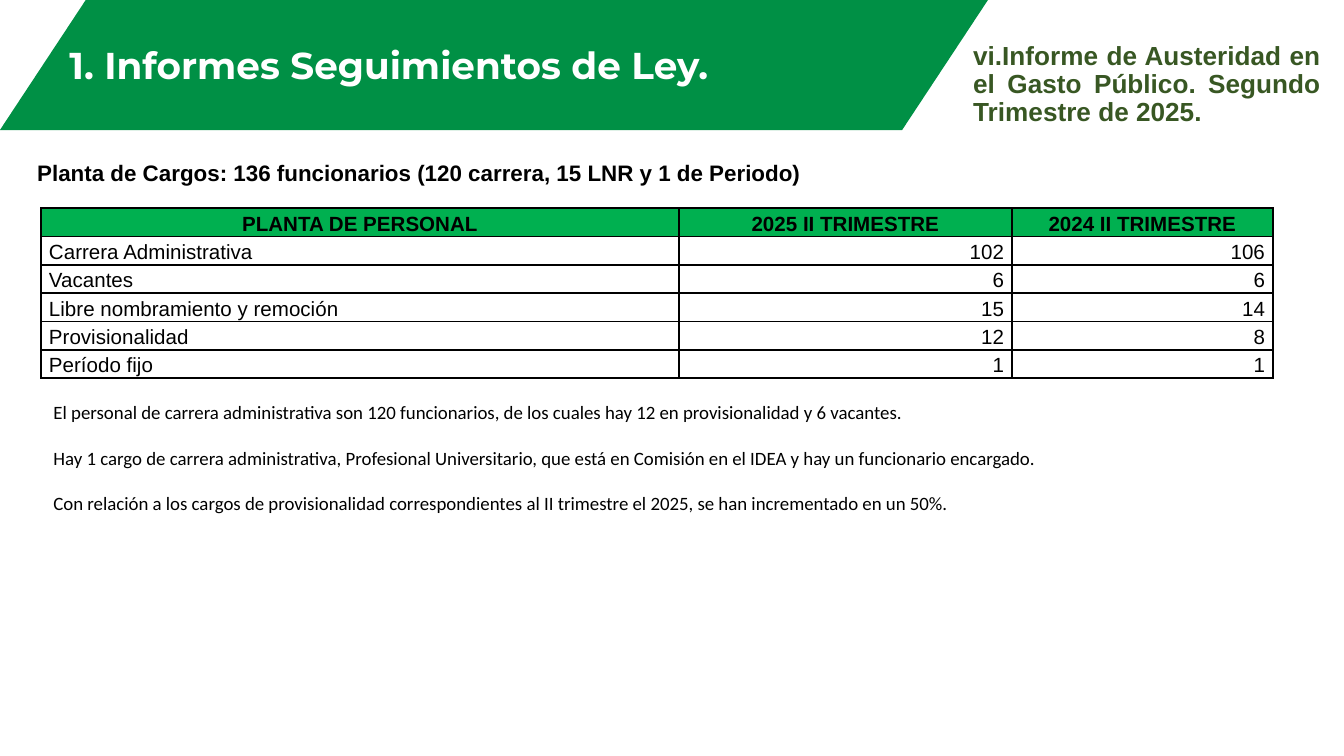
from lxml.etree import SubElement
from pptx import Presentation
from pptx.dml.color import RGBColor
from pptx.enum.shapes import MSO_SHAPE as SHAPE
from pptx.enum.text import MSO_ANCHOR as ANCHOR, MSO_AUTO_SIZE as AUTO_SIZE, PP_ALIGN as ALIGN
from pptx.oxml.ns import qn
from pptx.util import Emu, Pt

EMU_PER_PX = 9144000 / 1344
GREEN, HEADER_GREEN, DARK_GREEN = "009045", "00B050", "385723"
BLACK, WHITE = "000000", "FFFFFF"

HEADERS = ["PLANTA DE PERSONAL", "2025 II TRIMESTRE", "2024 II TRIMESTRE"]
STAFF = [
    ["Carrera Administrativa", "102", "106"],
    ["Vacantes", "6", "6"],
    ["Libre nombramiento y remoción", "15", "14"],
    ["Provisionalidad", "12", "8"],
    ["Período fijo", "1", "1"],
]
NOTES = [
    "El personal de carrera administrativa son 120 funcionarios, de los cuales hay 12 en "
    "provisionalidad y 6 vacantes.",
    "Hay 1 cargo de carrera administrativa, Profesional Universitario, que está en Comisión "
    "en el IDEA y hay un funcionario encargado.",
    "Con relación a los cargos de provisionalidad correspondientes al II trimestre el 2025, "
    "se han incrementado en un 50%.",
]


def px(length):
    return Emu(round(length * EMU_PER_PX))


def color(value):
    return RGBColor.from_string(value)


def place(shape, left, top, width, height):
    shape.left, shape.top = px(left), px(top)
    shape.width, shape.height = px(width), px(height)


def write(paragraph, text, size, hex_color=BLACK, bold=False, font="Arial",
          align=ALIGN.LEFT, spacing=1.0):
    paragraph.alignment = align
    paragraph.line_spacing = spacing
    paragraph.space_before = paragraph.space_after = Pt(0)
    run = paragraph.add_run()
    run.text = text
    run.font.name, run.font.size, run.font.bold = font, Pt(size), bold
    run.font.color.rgb = color(hex_color)


def add_label(slide, box, text, size, **style):
    label = slide.shapes.add_textbox(*map(px, box))
    label.text_frame.word_wrap = True
    write(label.text_frame.paragraphs[0], text, size, bold=True, align=ALIGN.JUSTIFY, **style)


def add_header(slide, left, top, width, height):
    # Slanted banner, placed behind the title
    banner = slide.shapes.add_shape(SHAPE.PARALLELOGRAM, *map(px, (left, top, width, height)))
    banner.adjustments[0] = 0.66
    banner.shadow.inherit = False
    banner.fill.solid()
    banner.fill.fore_color.rgb = color(GREEN)
    banner.line.fill.background()
    title = slide.shapes.title
    title.element.addprevious(banner.element)

    # Section title
    place(title, left, top + 36, 778, 58)
    frame = title.text_frame
    frame.auto_size = AUTO_SIZE.NONE
    frame.vertical_anchor = ANCHOR.BOTTOM
    write(frame.paragraphs[0], "1. Informes Seguimientos de Ley.", 20, WHITE, True,
          "Montserrat", ALIGN.CENTER, 0.9)

    # Report name to the right of the banner
    add_label(slide, (left + width - 28, top + 36, 374, 100),
              "vi.Informe de Austeridad en el Gasto Público. Segundo Trimestre de 2025.",
              14, hex_color=DARK_GREEN, spacing=0.9)


def add_borders(cell):
    properties = cell._tc.get_or_add_tcPr()
    for side in ("a:lnL", "a:lnR", "a:lnT", "a:lnB"):
        line = SubElement(properties, qn(side), w=str(Pt(1)))
        fill = SubElement(line, qn("a:solidFill"))
        SubElement(fill, qn("a:srgbClr"), val=BLACK)


def add_staff_table(slide, left, top, column_widths, height):
    rows = [HEADERS] + STAFF
    box = (left, top, sum(column_widths), height)
    table = slide.shapes.add_table(len(rows), len(HEADERS), *map(px, box)).table
    table.first_row = table.horz_banding = False
    for column, width in zip(table.columns, column_widths):
        column.width = px(width)
    for row_index, values in enumerate(rows):
        table.rows[row_index].height = px(height / len(rows))
        is_header = row_index == 0
        for column_index, text in enumerate(values):
            cell = table.cell(row_index, column_index)
            add_borders(cell)
            if is_header:
                cell.fill.solid()
                cell.fill.fore_color.rgb = color(HEADER_GREEN)
                align = ALIGN.CENTER
            else:
                cell.fill.background()
                align = ALIGN.RIGHT if column_index else ALIGN.JUSTIFY
            cell.margin_left = cell.margin_right = px(8)
            cell.margin_top = cell.margin_bottom = 0
            cell.vertical_anchor = ANCHOR.MIDDLE
            write(cell.text_frame.paragraphs[0], text, 11, bold=is_header,
                  align=align, spacing=1.15)


def add_notes_list(slide, left, top, width, height):
    body = slide.placeholders[1]
    place(body, left, top, width, height)
    frame = body.text_frame
    frame.auto_size = AUTO_SIZE.NONE
    for index, text in enumerate(NOTES):
        paragraph = frame.add_paragraph() if index else frame.paragraphs[0]
        properties = paragraph._p.get_or_add_pPr()
        properties.set("marL", "0")
        properties.set("indent", "0")
        SubElement(properties, qn("a:buNone"))
        write(paragraph, text, 10.1, font="Calibri")
        if index:
            paragraph.space_before = Pt(12.3)


def main():
    presentation = Presentation()
    presentation.slide_width, presentation.slide_height = px(1344), px(756)
    slide = presentation.slides.add_slide(presentation.slide_layouts[1])
    add_header(slide, 0, 0, 988, 130)
    add_label(slide, (24, 153, 808, 40),
              "Planta de Cargos: 136 funcionarios (120 carrera, 15 LNR y 1 de Periodo)", 12)
    add_staff_table(slide, 41, 208, [638, 333, 261], 170)
    add_notes_list(slide, 40, 394, 1232, 145)
    presentation.save("out.pptx")


if __name__ == "__main__":
    main()
